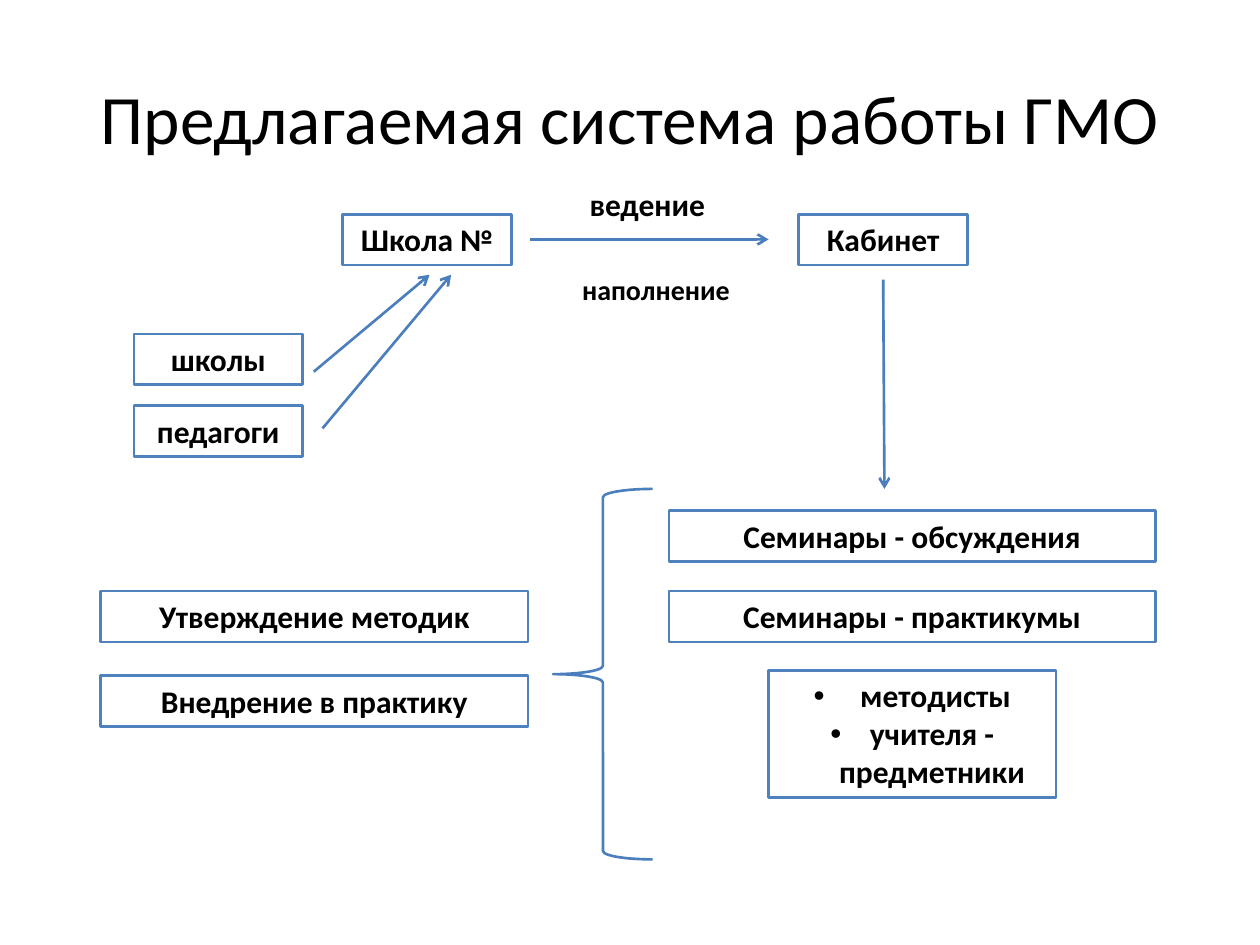
from lxml import etree
from pptx import Presentation, util as u
from pptx.dml.color import RGBColor
from pptx.enum import shapes, text
from pptx.oxml.ns import qn

HUES = {"ink": "000000", "box": "4F81BD", "line": "4B7EBC"}
FONT = "Calibri"


class Board:
    """Holds the style and the current slide."""

    def __init__(self, slide):
        self.slide = slide

    def hue(self, name):
        return RGBColor.from_string(HUES[name])

    def style(self, para, size, bold=True, align=text.PP_ALIGN.CENTER):
        para.alignment = align
        font = para.font
        font.name, font.size, font.bold = FONT, u.Pt(size), bold
        font.color.rgb = self.hue("ink")

    def stroke(self, line, name):
        line.color.rgb = self.hue(name)
        line.width = u.Pt(1.5)

    def title(self, words):
        shape = self.slide.shapes.title
        shape.left, shape.top, shape.width, shape.height = map(u.Pt, (36, 21.6, 648, 90))
        frame = shape.text_frame
        frame.text = words
        frame.vertical_anchor = text.MSO_ANCHOR.MIDDLE
        self.style(frame.paragraphs[0], 39.6, False)

    def form(self, kind, name, *area):
        shape = self.slide.shapes.add_shape(kind, *map(u.Pt, area))
        shape.shadow.inherit = False
        shape.fill.background()
        self.stroke(shape.line, name)
        return shape

    def box(self, words, x, y, w, h=29.1, listed=False):
        shape = self.form(shapes.MSO_SHAPE.RECTANGLE, "box", x, y, w, h)
        frame = shape.text_frame
        frame.text = words
        frame.word_wrap = True
        frame.vertical_anchor = text.MSO_ANCHOR.TOP
        for para in frame.paragraphs:
            self.style(para, 18)
            if listed:
                self.bullet(para)

    def bullet(self, para):
        props = para._p.get_or_add_pPr()
        props.set("marL", str(u.Pt(22.5)))
        props.set("indent", str(u.Pt(-22.5)))
        etree.SubElement(props, qn("a:buFont")).set("typeface", "Arial")
        etree.SubElement(props, qn("a:buChar")).set("char", "•")
        # Default run properties must follow the bullet.
        props.append(props.find(qn("a:defRPr")))

    def label(self, words, x, y, w, size):
        frame = self.slide.shapes.add_textbox(*map(u.Pt, (x, y, w, 29.1))).text_frame
        frame.text = words
        frame.word_wrap = True
        frame.margin_left = u.Pt(23)
        self.style(frame.paragraphs[0], size, align=text.PP_ALIGN.LEFT)

    def arrow(self, *ends):
        link = self.slide.shapes.add_connector(
            shapes.MSO_CONNECTOR.STRAIGHT, *map(u.Pt, ends))
        self.stroke(link.line, "line")
        tail = etree.SubElement(link.line._get_or_add_ln(), qn("a:tailEnd"))
        tail.set("type", "arrow")
        etree.SubElement(link._element.spPr, qn("a:effectLst"))


def main():
    deck = Presentation()
    deck.slide_width, deck.slide_height = u.Pt(720), u.Pt(540)
    board = Board(deck.slides.add_slide(deck.slide_layouts[5]))
    board.title("Предлагаемая система работы ГМО")

    for words, x, y in (
        ("Школа №", 195.8, 122.4),
        ("Кабинет", 456.5, 122.4),
        ("школы", 76.5, 190.8),
        ("педагоги", 76.5, 231.8),
    ):
        board.box(words, x, y, 96.5)

    board.label("ведение", 313.9, 102.2, 108, 18)
    board.label("наполнение", 309.6, 151.9, 130.3, 16)

    for ends in (
        (303.1, 136.8, 439.2, 136.8),
        (179.3, 212.4, 245.5, 157),
        (184.3, 244.8, 257.8, 157),
        (504.7, 159.8, 505.4, 279.4),
    ):
        board.arrow(*ends)

    for words, x, y, w in (
        ("Семинары - обсуждения", 382.3, 291.6, 277.9),
        ("Семинары - практикумы", 382.3, 337.7, 277.9),
        ("Утверждение методик", 57.6, 337.7, 244.1),
        ("Внедрение в практику", 57.6, 385.9, 244.1),
    ):
        board.box(words, x, y, w)
    board.box(" методисты\nучителя - предметники", 439.2, 383, 164.2, 72.7, listed=True)
    board.form(shapes.MSO_SHAPE.LEFT_BRACE, "line", 316.1, 279.4, 56.9, 211.7)

    deck.save("out.pptx")


if __name__ == "__main__":
    main()
